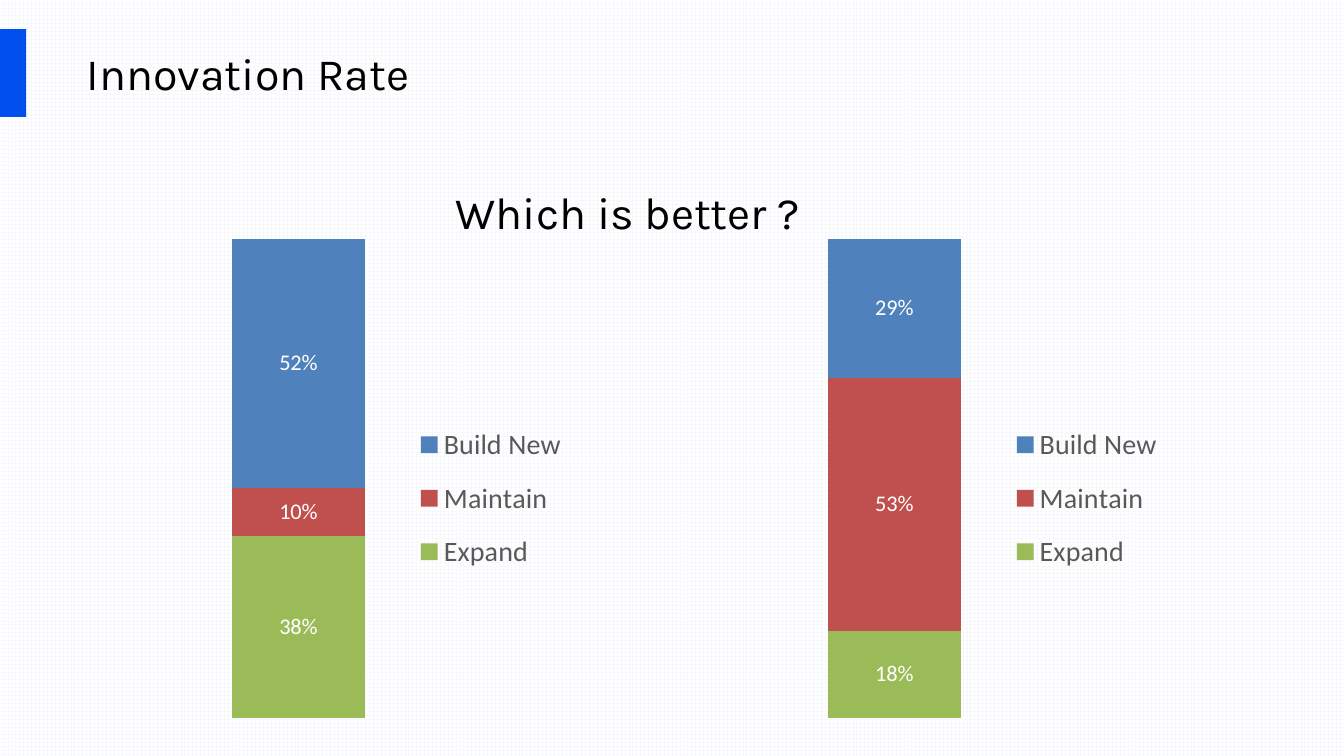
from lxml import etree
from pptx import Presentation
from pptx.chart.data import CategoryChartData
from pptx.dml.color import RGBColor
from pptx.enum.chart import XL_CHART_TYPE, XL_LABEL_POSITION, XL_LEGEND_POSITION
from pptx.enum.dml import MSO_PATTERN
from pptx.enum.shapes import MSO_SHAPE
from pptx.enum.text import MSO_ANCHOR, PP_ALIGN
from pptx.oxml.ns import qn
from pptx.util import Inches, Pt

TITLE = "Innovation Rate"
QUESTION = "Which is better ?"
BLACK = RGBColor(0x00, 0x00, 0x00)
WHITE = RGBColor(0xFF, 0xFF, 0xFF)
GRAY = RGBColor(0x59, 0x59, 0x59)
ACCENT = RGBColor(0x00, 0x50, 0xEF)
GRID = RGBColor(0xF6, 0xF8, 0xFC)
SERIES = [
    ("Expand", RGBColor(0x9B, 0xBB, 0x59)),
    ("Maintain", RGBColor(0xC0, 0x50, 0x4D)),
    ("Build New", RGBColor(0x4F, 0x81, 0xBD)),
]
CHARTS = [(7.77, (0.18, 0.53, 0.29)), (1.86, (0.38, 0.10, 0.52))]
CHART_TOP, CHART_WIDTH, CHART_HEIGHT = 2.27, 3.86, 4.95
PLOT_LAYOUT = {"x": 0.02, "y": 0.02, "w": 0.53, "h": 0.96}
LEGEND_LAYOUT = {"x": 0.57, "y": 0.36, "w": 0.42, "h": 0.36}
STACKED = XL_CHART_TYPE.COLUMN_STACKED_100
CENTER_LABEL = XL_LABEL_POSITION.CENTER
RIGHT = XL_LEGEND_POSITION.RIGHT


def style_font(font, name, size, color):
    """Set typeface, point size and colour."""
    font.name, font.size = name, Pt(size)
    font.color.rgb = color


def write_heading(shape, text, align, anchor):
    """Write one line of heading text."""
    frame = shape.text_frame
    frame.word_wrap = True
    frame.vertical_anchor = anchor
    frame.text = text
    para = frame.paragraphs[0]
    para.alignment = align
    style_font(para.font, "Karla", 32, BLACK)
    return para


def place_part(element, fractions, inner=False):
    """Give a chart part a fixed place within its chart."""
    for old in element.findall(qn("c:layout")):
        element.remove(old)
    layout = etree.Element(qn("c:layout"))
    manual = etree.SubElement(layout, qn("c:manualLayout"))
    if inner:
        etree.SubElement(manual, qn("c:layoutTarget")).set("val", "inner")
    for side in "xy":
        etree.SubElement(manual, qn(f"c:{side}Mode")).set("val", "edge")
    for side, value in fractions.items():
        etree.SubElement(manual, qn(f"c:{side}")).set("val", str(value))
    position = element.find(qn("c:legendPos"))
    element.insert(0 if position is None else element.index(position) + 1, layout)


def add_rate_chart(page, left, values):
    """Add one stacked column with its legend."""
    data = CategoryChartData(number_format="0%")
    data.categories = ["1"]
    for (name, _), value in zip(SERIES, values):
        data.add_series(name, [value])
    chart = page.shapes.add_chart(
        STACKED, Inches(left), Inches(CHART_TOP),
        Inches(CHART_WIDTH), Inches(CHART_HEIGHT), data,
    ).chart
    style_font(chart.font, "Calibri", 10, BLACK)
    chart.has_title = False
    chart.value_axis.has_major_gridlines = False
    chart.value_axis.visible = False
    chart.category_axis.visible = False
    chart.has_legend = True
    chart.legend.position = RIGHT
    chart.legend.include_in_layout = False
    style_font(chart.legend.font, "Calibri", 20, GRAY)
    plot = chart.plots[0]
    plot.gap_width, plot.overlap = 55, 100
    plot.vary_by_categories = False
    for series, (_, color) in zip(plot.series, SERIES):
        series.format.fill.solid()
        series.format.fill.fore_color.rgb = color
        labels = series.data_labels
        labels.show_value = True
        labels.position = CENTER_LABEL
        labels.number_format = "0%"
        labels.number_format_is_linked = False
        style_font(labels.font, "Calibri", 16, WHITE)
    area = chart.element.find(".//" + qn("c:plotArea"))
    place_part(area, PLOT_LAYOUT, inner=True)
    place_part(chart.element.find(".//" + qn("c:legend")), LEGEND_LAYOUT)


def main():
    """Build the slide and save it."""
    deck = Presentation()
    deck.slide_width, deck.slide_height = Inches(13.33), Inches(7.5)
    page = deck.slides.add_slide(deck.slide_layouts[5])
    fill = page.background.fill
    fill.patterned()
    fill.pattern = MSO_PATTERN.LARGE_GRID
    fill.fore_color.rgb, fill.back_color.rgb = GRID, WHITE

    marker = page.shapes.add_shape(
        MSO_SHAPE.RECTANGLE, 0, Inches(0.29), Inches(0.26), Inches(0.87))
    marker.shadow.inherit = False
    marker.fill.solid()
    marker.fill.fore_color.rgb = ACCENT
    marker.line.fill.background()

    title = page.shapes.title
    title.left, title.top = Inches(0.76), Inches(0.29)
    title.width, title.height = Inches(11.92), Inches(0.85)
    write_heading(title, TITLE, PP_ALIGN.LEFT, MSO_ANCHOR.MIDDLE)

    question = page.shapes.add_textbox(
        Inches(3.12), Inches(1.78), Inches(6.22), Inches(0.87))
    para = write_heading(question, QUESTION, PP_ALIGN.CENTER, MSO_ANCHOR.TOP)
    para.space_before = Pt(6.4)

    for left, values in CHARTS:
        add_rate_chart(page, left, values)
    deck.save("out.pptx")


if __name__ == "__main__":
    main()
